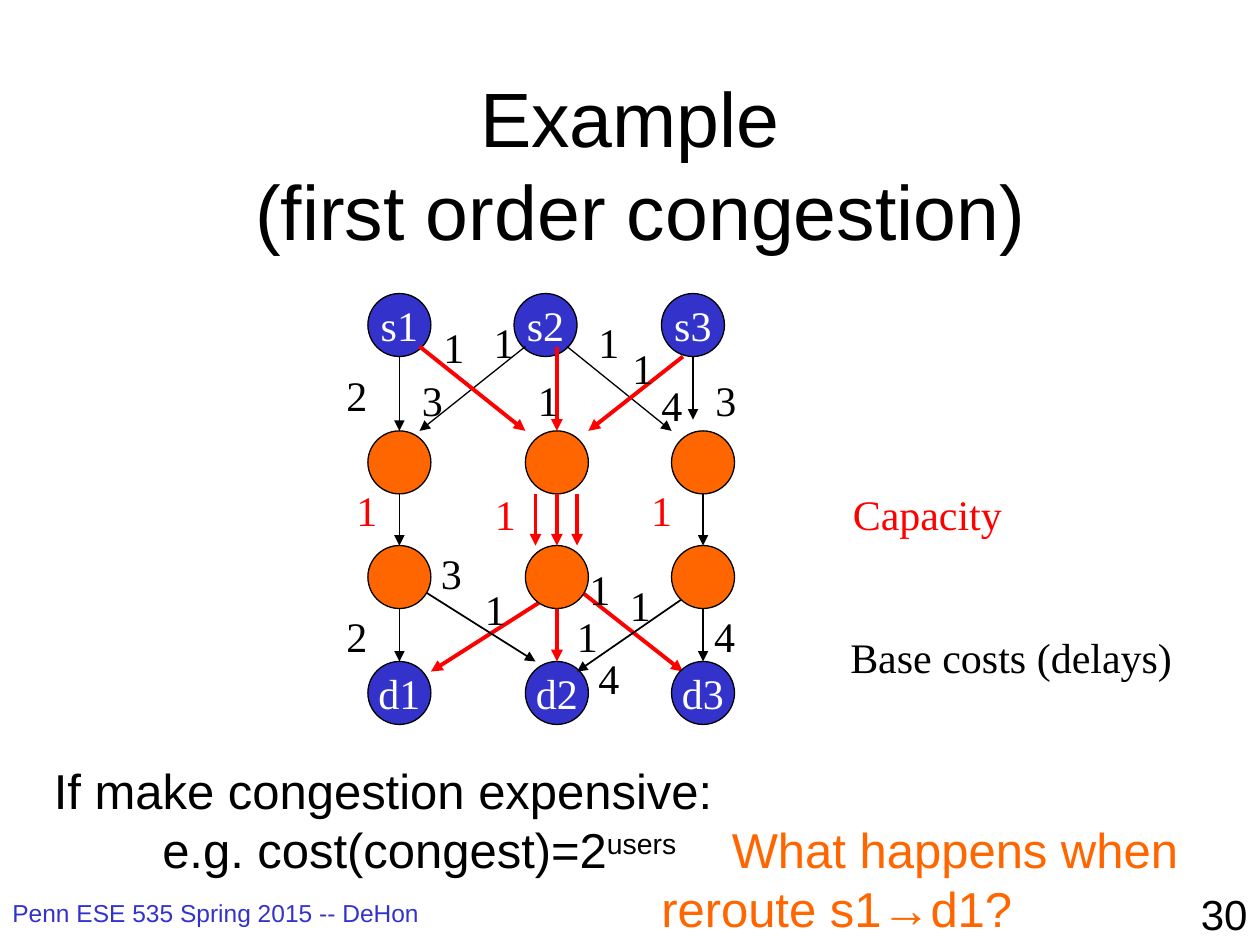
from lxml import etree
from pptx import Presentation
from pptx.dml.color import RGBColor
from pptx.enum.shapes import MSO_CONNECTOR, MSO_SHAPE
from pptx.enum.text import MSO_ANCHOR, PP_ALIGN
from pptx.oxml.ns import qn
from pptx.util import Inches, Pt

STRAIGHT = MSO_CONNECTOR.STRAIGHT
OVAL = MSO_SHAPE.OVAL
MIDDLE = MSO_ANCHOR.MIDDLE
LEFT, CENTER, RIGHT = PP_ALIGN.LEFT, PP_ALIGN.CENTER, PP_ALIGN.RIGHT

SANS, SERIF = "Arial", "Times New Roman"
BLACK, WHITE, RED = "000000", "FFFFFF", "FF0000"
BLUE, ORANGE = "3333CC", "FF6600"

NODE_SIZE = 0.5
LABEL_SIZE = (0.37, 0.5)
SOURCE_COLUMNS = (2.92, 4.08, 5.25)
COLUMNS = (2.92, 4.17, 5.33)
# top, left edges, fill, names
TERMINAL_ROWS = [
    (2.33, SOURCE_COLUMNS, BLUE, ("s1", "s2", "s3")),
    (5.25, COLUMNS, BLUE, ("d1", "d2", "d3")),
]
SWITCH_ROWS = [(top, COLUMNS, ORANGE, ("", "", "")) for top in (3.42, 4.33)]

# start x, start y, end x, end y
OUTER_EXIT_ROUTES = [(4.58, 4.67, 5.42, 5.33), (4.33, 4.75, 3.42, 5.33)]
MIDDLE_EXIT_ROUTE = [(4.42, 4.75, 4.42, 5.25)]
FREE_EXITS = [(3.17, 4.75, 3.17, 5.25), (5.58, 4.83, 5.58, 5.25)]
FREE_EXIT_DIAGONALS = [(3.33, 4.67, 4.25, 5.25), (5.42, 4.75, 4.58, 5.33)]
ROUTES = [
    (3.33, 2.75, 4.17, 3.42), (4.42, 2.75, 4.42, 3.42), (5.42, 2.83, 4.67, 3.42),
    (4.25, 3.92, 4.25, 4.33), (4.42, 3.92, 4.42, 4.33), (4.58, 3.92, 4.58, 4.33),
]
FREE_EDGES = [
    (3.17, 2.83, 3.17, 3.42), (4.17, 2.75, 3.33, 3.42),
    (4.5, 2.75, 5.33, 3.42), (5.5, 2.83, 5.5, 3.33),
    (3.17, 3.92, 3.17, 4.33), (5.58, 3.92, 5.58, 4.33),
]

# cost, left, top
COSTS = [
    ("2", 2.65, 2.88), ("3", 3.25, 2.92), ("4", 5.15, 2.96), ("3", 5.58, 2.92),
    ("1", 3.42, 2.5), ("1", 3.82, 2.46), ("1", 4.17, 2.92), ("1", 4.65, 2.46),
    ("1", 4.92, 2.67), ("3", 3.4, 4.3), ("1", 3.75, 4.58), ("1", 4.58, 4.42),
    ("1", 4.9, 4.55), ("2", 2.65, 4.8), ("1", 4.48, 4.8), ("4", 5.57, 4.8),
    ("4", 4.65, 5.13),
]
CAPACITIES = [("1", 2.73, 3.8), ("1", 3.83, 3.83), ("1", 5.07, 3.8)]


def color(value):
    return RGBColor.from_string(value)


def add_span(para, text, size, font, fill):
    span = para.add_run()
    span.text = text
    span.font.size = Pt(size)
    span.font.name = font
    span.font.color.rgb = color(fill)
    return span


def add_text(page, text, place, size, font, fill, align=LEFT, wrap=False):
    box = page.shapes.add_textbox(*map(Inches, place))
    box.text_frame.word_wrap = wrap
    para = box.text_frame.paragraphs[0]
    para.alignment = align
    add_span(para, text, size, font, fill)


def add_node(page, left, top, fill, name):
    node = page.shapes.add_shape(
        OVAL, Inches(left), Inches(top), Inches(NODE_SIZE), Inches(NODE_SIZE))
    node.shadow.inherit = False
    node.fill.solid()
    node.fill.fore_color.rgb = color(fill)
    node.line.color.rgb = color(BLACK)
    node.line.width = Pt(0.75)
    if name:
        frame = node.text_frame
        frame.word_wrap = False
        frame.vertical_anchor = MIDDLE
        frame.paragraphs[0].alignment = CENTER
        add_span(frame.paragraphs[0], name, 24, SERIF, WHITE)


def add_node_rows(page, rows):
    for top, columns, fill, names in rows:
        for left, name in zip(columns, names):
            add_node(page, left, top, fill, name)


def add_arrows(page, edges, stroke, width):
    for edge in edges:
        arrow = page.shapes.add_connector(STRAIGHT, *map(Inches, edge))
        arrow.line.color.rgb = color(stroke)
        arrow.line.width = Pt(width)
        line = arrow.line._get_or_add_ln()
        etree.SubElement(line, qn("a:tailEnd"), type="triangle")
        etree.SubElement(arrow._element.spPr, qn("a:effectLst"))


def add_labels(page, labels, fill):
    for text, left, top in labels:
        add_text(page, text, (left, top, *LABEL_SIZE), 24, SERIF, fill)


def set_tabs(para, positions):
    """Put left tab stops at the given inches from the text edge."""
    tabs = etree.SubElement(para._p.get_or_add_pPr(), qn("a:tabLst"))
    for position in positions:
        etree.SubElement(tabs, qn("a:tab"), pos=str(Inches(position)), algn="l")


def add_title(page):
    title = page.shapes.title
    title.left, title.top = Inches(0.75), Inches(0.67)
    title.width, title.height = Inches(8.5), Inches(1.25)
    frame = title.text_frame
    frame.word_wrap = True
    frame.vertical_anchor = MIDDLE
    para = frame.paragraphs[0]
    para.alignment = CENTER
    add_span(para, "Example", 44, SANS, BLACK)
    para.add_line_break()
    add_span(para, " (first order congestion)", 44, SANS, BLACK)


def add_network(page):
    """Exit arrows start behind the switches, so they are drawn before them."""
    add_arrows(page, OUTER_EXIT_ROUTES, RED, 2.25)
    add_node_rows(page, TERMINAL_ROWS)
    add_arrows(page, FREE_EXITS, BLACK, 0.75)
    add_arrows(page, FREE_EXIT_DIAGONALS, BLACK, 1)
    add_arrows(page, MIDDLE_EXIT_ROUTE, RED, 2.25)
    add_node_rows(page, SWITCH_ROWS)
    add_arrows(page, FREE_EDGES, BLACK, 0.75)
    add_arrows(page, ROUTES, RED, 2.25)


def add_question(page):
    box = page.shapes.add_textbox(
        Inches(0.33), Inches(5.99), Inches(9.3), Inches(1.51))
    frame = box.text_frame
    frame.word_wrap = True
    add_span(frame.paragraphs[0], "If make congestion expensive:", 28, SANS, BLACK)

    para = frame.add_paragraph()
    set_tabs(para, (0.86, 5.38))
    add_span(para, "\te.g. cost(congest)=2", 28, SANS, BLACK)
    exponent = add_span(para, "users", 28, SANS, BLACK)
    exponent.font._element.set("baseline", "30000")
    add_span(para, "\tWhat happens when", 28, SANS, ORANGE)

    para = frame.add_paragraph()
    set_tabs(para, (4.82,))
    add_span(para, "\treroute s1→d1?", 28, SANS, ORANGE)


def main():
    deck = Presentation()
    deck.slide_width, deck.slide_height = Inches(10), Inches(7.5)
    page = deck.slides.add_slide(deck.slide_layouts[5])

    add_title(page)
    add_text(page, "Penn ESE 535 Spring 2015 -- DeHon", (0, 7.08, 3.83, 0.42),
             14, SANS, BLUE, wrap=True)
    add_text(page, "30", (7.92, 7, 2.08, 0.5), 24, SANS, BLACK, RIGHT, True)

    add_network(page)
    add_labels(page, COSTS, BLACK)
    add_labels(page, CAPACITIES, RED)
    add_text(page, "Capacity", (6.67, 3.83, 1.5, 0.5), 24, SERIF, RED)
    add_text(page, "Base costs (delays)", (6.65, 4.96, 2.8, 0.5), 24, SERIF, BLACK)
    add_question(page)
    deck.save("out.pptx")


if __name__ == "__main__":
    main()
